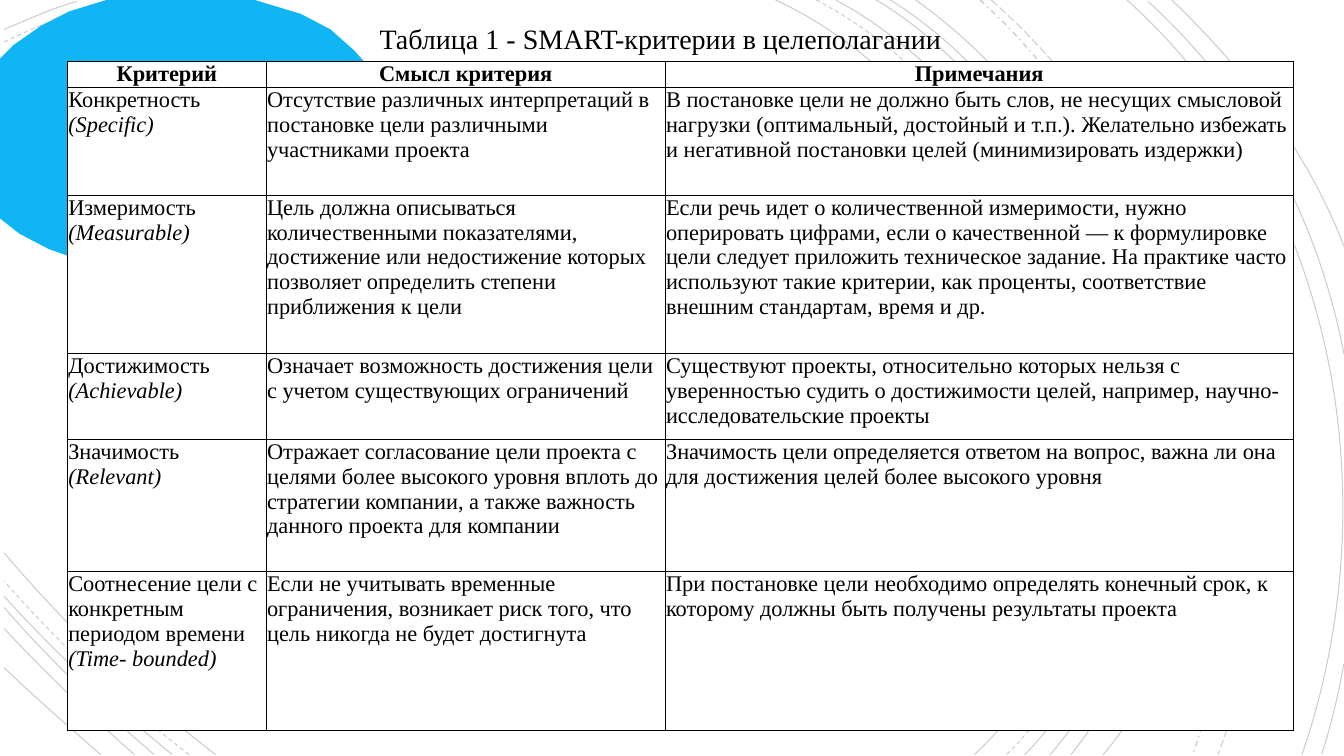
import pptx
import pptx.dml.color
import pptx.enum.dml
import pptx.enum.shapes
import pptx.enum.text
import pptx.oxml
import pptx.oxml.ns
import pptx.util

Pt = pptx.util.Pt
qn = pptx.oxml.ns.qn
NAMESPACE = pptx.oxml.ns.nsdecls("a")
DASH = pptx.enum.dml.MSO_LINE
ALIGN = pptx.enum.text.PP_ALIGN

FONT = "Times New Roman"
COLORS = {"ink": "000000", "paper": "FFFFFF", "accent": "10B6F4"}

ARCS = [
    ((554, 0), (734, 83), (858, 389), (696, 539), DASH.SOLID),
    ((3, 45), (41, 24), (84, 12), (125, 1), DASH.SOLID),
    ((154, 539), (99, 497), (48, 448), (3, 395), DASH.SOLID),
    ((583, 0), (756, 90), (873, 387), (719, 539), DASH.DASH),
    ((3, 30), (27, 18), (53, 9), (79, 1), DASH.DASH),
    ((135, 539), (88, 503), (43, 461), (3, 415), DASH.DASH),
    ((597, 0), (767, 91), (882, 387), (732, 539), DASH.SOLID),
    ((3, 21), (20, 14), (37, 6), (55, 1), DASH.SOLID),
    ((123, 539), (81, 505), (40, 467), (3, 426), DASH.SOLID),
    ((626, 0), (786, 96), (882, 390), (750, 539), DASH.SOLID),
    ((110, 539), (73, 507), (36, 472), (3, 434), DASH.SOLID),
    ((636, 0), (795, 99), (891, 384), (765, 539), DASH.SOLID),
    ((96, 539), (63, 510), (32, 480), (3, 449), DASH.SOLID),
    ((654, 0), (805, 106), (923, 381), (788, 539), DASH.SOLID),
    ((72, 539), (49, 519), (25, 498), (3, 477), DASH.SOLID),
    ((700, 0), (834, 120), (914, 366), (852, 539), DASH.DASH_DOT),
    ((708, 0), (847, 122), (940, 359), (870, 539), DASH.LONG_DASH),
    ((805, 0), (953, 133), (994, 353), (930, 539), DASH.SOLID),
    ((820, 1), (894, 69), (941, 154), (960, 253), DASH.SOLID),
    ((960, 474), (956, 496), (951, 518), (944, 539), DASH.SOLID),
    ((837, 0), (889, 50), (934, 108), (960, 176), DASH.SOLID),
]

BUBBLE = [
    (96, 189), (109, 189), (138, 186), (166, 178), (194, 167), (219, 153),
    (240, 136), (257, 116), (267, 92), (269, 73), (267, 61), (261, 45),
    (253, 36), (236, 21), (215, 10), (182, 0), (76, 0), (50, 8), (30, 18),
    (10, 32), (0, 42), (0, 156), (14, 167), (35, 178), (58, 186), (83, 189),
]

TITLE = "Таблица 1 - SMART-критерии в целеполагании"
COLUMN_WIDTHS = [142, 285, 448.5]
ROW_HEIGHTS = [18.7, 77, 113, 61.4, 94.4, 113.4]
HEADERS = ["Критерий", "Смысл критерия", "Примечания"]
CRITERIA = [
    ("Конкретность ", "(Specific)",
     "Отсутствие различных интерпретаций в постановке цели различными участниками проекта",
     "В постановке цели не должно быть слов, не несущих смысловой нагрузки (оптимальный, достойный "
     "и т.п.). Желательно избежать и негативной постановки целей (минимизировать издержки)"),
    ("Измеримость ", "(Measurable)",
     "Цель должна описываться количественными показателями, достижение или недостижение которых "
     "позволяет определить степени приближения к цели",
     "Если речь идет о количественной измеримости, нужно оперировать цифрами, если о качественной — "
     "к формулировке цели следует приложить техническое задание. На практике часто используют такие "
     "критерии, как проценты, соответствие внешним стандартам, время и др."),
    ("Достижимость ", "(Achiеvable)",
     "Означает возможность достижения цели с учетом существующих ограничений",
     "Существуют проекты, относительно которых нельзя с уверенностью судить о достижимости целей, "
     "например, научно-исследовательские проекты"),
    ("Значимость ", "(Relevant)",
     "Отражает согласование цели проекта с целями более высокого уровня вплоть до стратегии компании, "
     "а также важность данного проекта для компании",
     "Значимость цели определяется ответом на вопрос, важна ли она для достижения целей более "
     "высокого уровня"),
    ("Соотнесение цели с конкретным периодом времени", " (Time- bounded)",
     "Если не учитывать временные ограничения, возникает риск того, что цель никогда не будет достигнута",
     "При постановке цели необходимо определять конечный срок, к которому должны быть получены "
     "результаты проекта"),
]


def color(name):
    return pptx.dml.color.RGBColor.from_string(COLORS[name])


def paint(fill, name):
    fill.solid()
    fill.fore_color.rgb = color(name)


def style_run(run, size, bold=False, italic=False):
    run.font.name = FONT
    run.font.size = Pt(size)
    run.font.bold = bold
    run.font.italic = italic
    run.font.color.rgb = color("ink")


def add_outline(slide, points, close):
    vertices = [(Pt(x), Pt(y)) for x, y in points]
    builder = slide.shapes.build_freeform(*vertices[0], scale=1.0)
    builder.add_line_segments(vertices[1:], close=close)
    shape = builder.convert_to_shape()
    shape.shadow.inherit = False
    return shape


def bend_segments(shape):
    outline = shape._element.find(".//" + qn("a:path"))
    curve = pptx.oxml.parse_xml(f"<a:cubicBezTo {NAMESPACE}/>")
    for segment in outline.findall(qn("a:lnTo")):
        curve.append(segment[0])
        outline.remove(segment)
    outline.append(curve)


def add_arc(slide, start, first, second, end, dash):
    shape = add_outline(slide, [start, first, second, end], close=False)
    bend_segments(shape)
    shape.fill.background()
    shape.line.width = Pt(1 if dash == DASH.DASH_DOT else 0.75)
    paint(shape.line.fill, "ink")
    if dash != DASH.SOLID:
        shape.line.dash_style = dash
    ink = shape._element.spPr.find(qn("a:ln")).find(".//" + qn("a:srgbClr"))
    ink.append(pptx.oxml.parse_xml(f'<a:alpha {NAMESPACE} val="20000"/>'))


def add_bubble(slide):
    tail = slide.shapes.add_shape(
        pptx.enum.shapes.MSO_SHAPE.ISOSCELES_TRIANGLE, Pt(200), Pt(64), Pt(105), Pt(55))
    tail.rotation = 99.8
    tail.shadow.inherit = False
    for shape in (tail, add_outline(slide, BUBBLE, close=True)):
        paint(shape.fill, "accent")
        shape.line.fill.background()


def add_borders(cell):
    properties = cell._tc.get_or_add_tcPr()
    for side in ("lnL", "lnR", "lnT", "lnB"):
        properties.append(pptx.oxml.parse_xml(
            f'<a:{side} {NAMESPACE} w="{Pt(1)}"><a:solidFill>'
            f'<a:srgbClr val="{COLORS["ink"]}"/></a:solidFill></a:{side}>'))


def fill_cell(cell, text, italic_text="", header=False):
    cell.margin_left = cell.margin_right = Pt(0.6)
    cell.margin_top = cell.margin_bottom = Pt(0)
    add_borders(cell)
    paint(cell.fill, "paper")
    paragraph = cell.text_frame.paragraphs[0]
    paragraph.text = text
    paragraph.alignment = ALIGN.CENTER if header else ALIGN.LEFT
    style_run(paragraph.runs[0], 16, bold=header)
    if italic_text:
        run = paragraph.add_run()
        run.text = italic_text
        style_run(run, 16, italic=True)


def add_criteria_table(slide):
    table = slide.shapes.add_table(
        len(ROW_HEIGHTS), len(COLUMN_WIDTHS), Pt(48.2), Pt(43.7),
        Pt(sum(COLUMN_WIDTHS)), Pt(sum(ROW_HEIGHTS))).table
    table.first_row = table.horz_banding = False
    for column, width in zip(table.columns, COLUMN_WIDTHS):
        column.width = Pt(width)
    for row, height in zip(table.rows, ROW_HEIGHTS):
        row.height = Pt(height)
    for index, header in enumerate(HEADERS):
        fill_cell(table.cell(0, index), header, header=True)
    for index, (name, english, meaning, note) in enumerate(CRITERIA, 1):
        fill_cell(table.cell(index, 0), name, english)
        fill_cell(table.cell(index, 1), meaning)
        fill_cell(table.cell(index, 2), note)


def add_title(slide):
    text_frame = slide.shapes.add_textbox(Pt(264), Pt(0), Pt(420), Pt(44)).text_frame
    text_frame.word_wrap = False
    text_frame.auto_size = pptx.enum.text.MSO_AUTO_SIZE.SHAPE_TO_FIT_TEXT
    text_frame.text = TITLE
    paragraph = text_frame.paragraphs[0]
    paragraph.line_spacing = 1.5
    style_run(paragraph.runs[0], 20)


def main():
    presentation = pptx.Presentation()
    presentation.slide_width = Pt(960)
    presentation.slide_height = Pt(540)
    slide = presentation.slides.add_slide(presentation.slide_layouts[6])
    paint(slide.background.fill, "paper")
    for arc in ARCS:
        add_arc(slide, *arc)
    add_bubble(slide)
    add_criteria_table(slide)
    add_title(slide)
    presentation.save("out.pptx")


if __name__ == "__main__":
    main()
